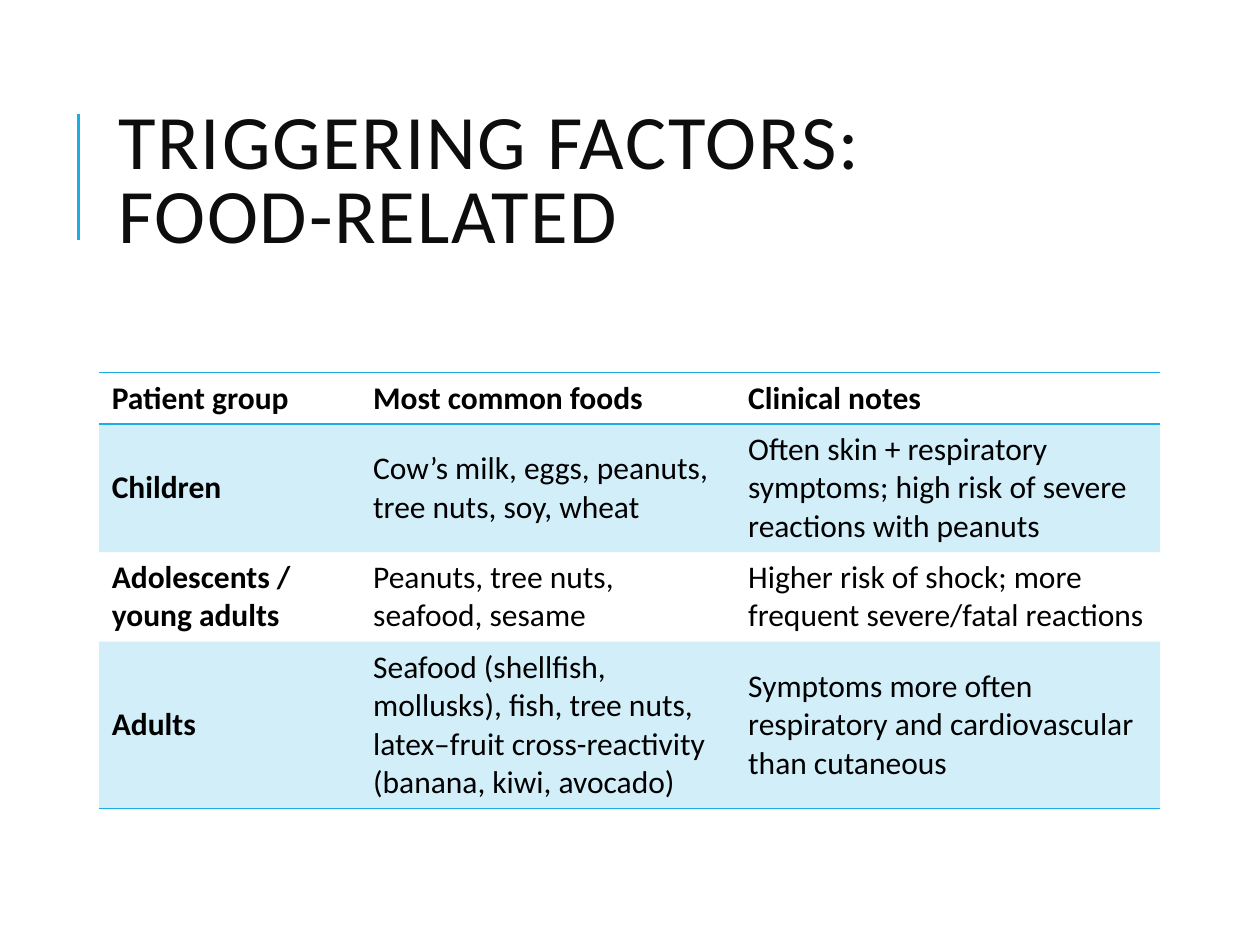
from dataclasses import dataclass

from lxml.etree import SubElement
from pptx import Presentation
from pptx.dml.color import RGBColor
from pptx.enum.shapes import MSO_CONNECTOR
from pptx.enum.text import MSO_ANCHOR, MSO_AUTO_SIZE, PP_ALIGN
from pptx.oxml.ns import qn
from pptx.slide import Slide
from pptx.table import _Cell
from pptx.util import Cm, Pt

COLORS = {"accent": "1CADE4", "title": "0D0D0D", "text": "000000"}
FONT = "Calibri"
PLAIN_TABLE_STYLE = "{2D5ABB26-0587-4C30-8999-92F81FD0307C}"
COLUMN_WIDTHS = (5.27, 7.56, 8.56)


@dataclass
class TableRow:
    height: float
    texts: tuple[str, str, str]
    header: bool = False
    shaded: bool = False
    borders: tuple[str, ...] = ()


ROWS = [
    TableRow(1.04, ("Patient group", "Most common foods", "Clinical notes"),
             header=True, borders=("a:lnT", "a:lnB")),
    TableRow(2.58, ("Children",
                    "Cow’s milk, eggs, peanuts, tree nuts, soy, wheat",
                    "Often skin + respiratory symptoms; high risk of severe "
                    "reactions with peanuts"), shaded=True),
    TableRow(1.8, ("Adolescents / young adults",
                   "Peanuts, tree nuts, seafood, sesame",
                   "Higher risk of shock; more frequent severe/fatal reactions")),
    TableRow(3.36, ("Adults",
                    "Seafood (shellfish, mollusks), fish, tree nuts, "
                    "latex–fruit cross-reactivity (banana, kiwi, avocado)",
                    "Symptoms more often respiratory and cardiovascular "
                    "than cutaneous"), shaded=True, borders=("a:lnB",)),
]


def color(name: str) -> RGBColor:
    return RGBColor.from_string(COLORS[name])


def draw_title(page: Slide, text: str) -> None:
    box = page.shapes.title
    box.left, box.top, box.width, box.height = Cm(2.13), Cm(1.63), Cm(20.24), Cm(4.17)
    frame = box.text_frame
    frame.text = text
    frame.word_wrap = True
    frame.auto_size = MSO_AUTO_SIZE.NONE
    frame.vertical_anchor = MSO_ANCHOR.MIDDLE
    paragraph = frame.paragraphs[0]
    paragraph.alignment = PP_ALIGN.LEFT
    paragraph.line_spacing = 0.8
    span = paragraph.runs[0]
    span.font.name = FONT
    span.font.size = Pt(44)
    span.font.color.rgb = color("title")
    span.font._element.set("spc", "100")


def draw_accent_line(page: Slide) -> None:
    line = page.shapes.add_connector(
        MSO_CONNECTOR.STRAIGHT, Cm(1.58), Cm(4.83), Cm(1.58), Cm(2.29))
    line.line.color.rgb = color("accent")
    line.line.width = Pt(1.5)
    SubElement(line._element.spPr, qn("a:effectLst"))


def add_border(cell: _Cell, side: str) -> None:
    border = SubElement(cell._tc.get_or_add_tcPr(), qn(side), w=str(Pt(1)))
    fill = SubElement(border, qn("a:solidFill"))
    SubElement(fill, qn("a:srgbClr"), val=COLORS["accent"])


def format_cell(cell: _Cell, text: str, row: TableRow, bold: bool) -> None:
    cell.text_frame.text = text
    cell.vertical_anchor = MSO_ANCHOR.MIDDLE
    font = cell.text_frame.paragraphs[0].runs[0].font
    font.name = FONT
    font.size = Pt(18)
    font.bold = bold
    font.color.rgb = color("text")
    for side in row.borders:
        add_border(cell, side)
    if row.shaded:
        cell.fill.solid()
        cell.fill.fore_color.rgb = color("accent")
        tint = cell._tc.tcPr.find(f"{qn('a:solidFill')}/{qn('a:srgbClr')}")
        SubElement(tint, qn("a:alpha"), val="20000")
    else:
        cell.fill.background()


def draw_table(page: Slide, rows: list[TableRow]) -> None:
    table = page.shapes.add_table(
        len(rows), len(COLUMN_WIDTHS), Cm(2), Cm(7.51),
        Cm(sum(COLUMN_WIDTHS)), Cm(sum(row.height for row in rows))).table
    table.horz_banding = False
    table._tbl.tblPr.find(qn("a:tableStyleId")).text = PLAIN_TABLE_STYLE
    for column, width in zip(table.columns, COLUMN_WIDTHS):
        column.width = Cm(width)
    for row_index, row in enumerate(rows):
        table.rows[row_index].height = Cm(row.height)
        for column_index, text in enumerate(row.texts):
            format_cell(table.cell(row_index, column_index), text, row,
                        bold=row.header or column_index == 0)


def main() -> None:
    deck = Presentation()
    deck.slide_width, deck.slide_height = Cm(25.4), Cm(19.05)
    page = deck.slides.add_slide(deck.slide_layouts[5])
    draw_accent_line(page)
    draw_title(page, "TRIGGERING FACTORS: FOOD-RELATED")
    draw_table(page, ROWS)
    deck.save("out.pptx")


if __name__ == "__main__":
    main()
